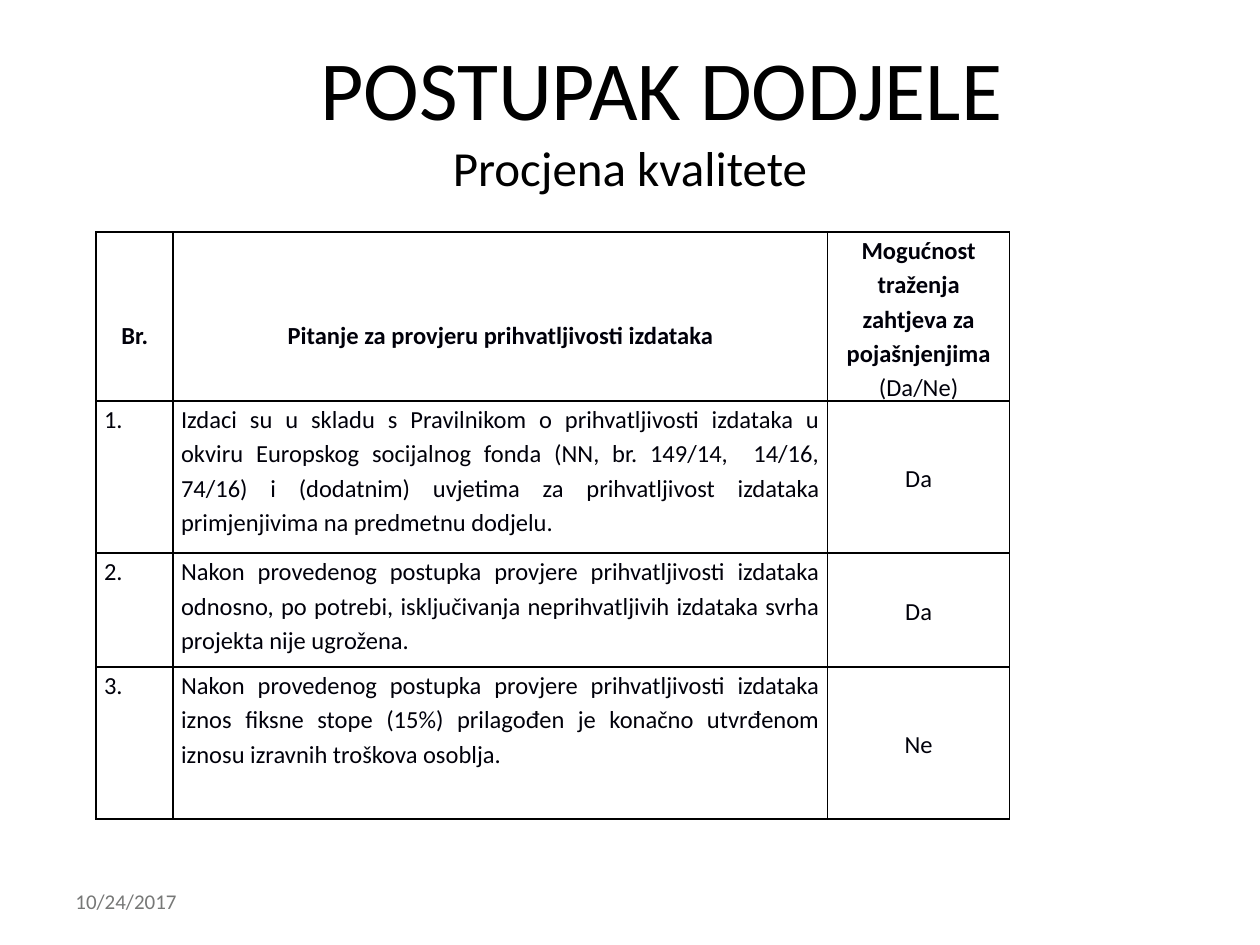
from lxml import etree
from pptx import Presentation
from pptx import util as u
from pptx.dml.color import RGBColor
from pptx.enum import text
from pptx.oxml.ns import qn

COLORS = {"title": "000000", "table": "00000A", "border": "000000", "date": "777877"}
CENTER, JUSTIFY = text.PP_ALIGN.CENTER, text.PP_ALIGN.JUSTIFY
MIDDLE, TOP = text.MSO_ANCHOR.MIDDLE, text.MSO_ANCHOR.TOP


class Sheet:
    """Holds the style and the current slide."""
    font_name = "Calibri"
    table_size = 14
    line_spacing = 1.15
    side_margin = 4.5
    border_width = 1

    def __init__(self, page):
        self.page = page

    def style(self, font, color, size, bold=False):
        font.name, font.size, font.bold = self.font_name, u.Pt(size), bold
        font.color.rgb = RGBColor.from_string(COLORS[color])

    def text_box(self, left, top, width, height, lines, color, align=None):
        """Lines are (wording, size) pairs, parted by line breaks."""
        box = self.page.shapes.add_textbox(*map(u.Pt, (left, top, width, height)))
        frame = box.text_frame
        frame.word_wrap = True
        frame.vertical_anchor = MIDDLE
        para = frame.paragraphs[0]
        para.alignment = align
        for index, (wording, size) in enumerate(lines):
            if index:
                para.add_line_break()
            span = para.add_run()
            span.text = wording
            self.style(span.font, color, size)

    def border(self, cell):
        properties = cell._tc.get_or_add_tcPr()
        for index, side in enumerate(("lnL", "lnR", "lnT", "lnB")):
            line = etree.Element(qn(f"a:{side}"), w=str(u.Pt(self.border_width)))
            fill = etree.SubElement(line, qn("a:solidFill"))
            etree.SubElement(fill, qn("a:srgbClr"), val=COLORS["border"])
            properties.insert(index, line)

    def cell(self, cell, spans, align, anchor, top_margin=0):
        """Spans are (wording, bold) pairs."""
        cell.margin_left = cell.margin_right = u.Pt(self.side_margin)
        cell.margin_top, cell.margin_bottom = u.Pt(top_margin), 0
        cell.vertical_anchor = anchor
        cell.fill.background()
        self.border(cell)
        para = cell.text_frame.paragraphs[0]
        para.alignment, para.line_spacing = align, self.line_spacing
        for wording, bold in spans:
            span = para.add_run()
            span.text = wording
            self.style(span.font, "table", self.table_size, bold)

    def table(self, left, top, widths, heights, header, rows):
        size = (left, top, sum(widths), sum(heights))
        table = self.page.shapes.add_table(
            len(heights), len(widths), *map(u.Pt, size)).table
        table.first_row = table.horz_banding = False
        for column, width in zip(table.columns, widths):
            column.width = u.Pt(width)
        for row, height in zip(table.rows, heights):
            row.height = u.Pt(height)
        for index, (spans, top_margin) in enumerate(header):
            self.cell(table.cell(0, index), spans, CENTER, MIDDLE, top_margin)
        for number, (question, answer) in enumerate(rows, 1):
            self.cell(table.cell(number, 0), [(f"{number}.", False)], JUSTIFY, TOP)
            self.cell(table.cell(number, 1), [(question, False)], JUSTIFY, TOP)
            self.cell(table.cell(number, 2), [(answer, False)], CENTER, MIDDLE)


HEADER_DROP = 19.5  # lowers the short headings by one line
HEADER = [
    ([("Br.", True)], HEADER_DROP),
    ([("Pitanje za provjeru prihvatljivosti izdataka", True)], HEADER_DROP),
    ([("Mogućnost traženja zahtjeva za pojašnjenjima ", True), ("(Da/Ne)", False)], 0),
]
QUESTIONS = [
    ("Izdaci su u skladu s Pravilnikom o prihvatljivosti izdataka u okviru "
     "Europskog socijalnog fonda (NN, br. 149/14,  14/16, 74/16) i (dodatnim) "
     "uvjetima za prihvatljivost izdataka primjenjivima na predmetnu dodjelu.", "Da"),
    ("Nakon provedenog postupka provjere prihvatljivosti izdataka odnosno, po "
     "potrebi, isključivanja neprihvatljivih izdataka svrha projekta nije "
     "ugrožena.", "Da"),
    ("Nakon provedenog postupka provjere prihvatljivosti izdataka iznos fiksne "
     "stope (15%) prilagođen je konačno utvrđenom iznosu izravnih troškova "
     "osoblja.", "Ne"),
]


def main():
    deck = Presentation()
    deck.slide_width, deck.slide_height = u.Pt(720), u.Pt(540)
    sheet = Sheet(deck.slides.add_slide(deck.slide_layouts[6]))

    # Date
    sheet.text_box(36, 500.5, 168, 28.75, [("10/24/2017", 12)], "date")

    # Title and subtitle
    sheet.text_box(36, 21.6, 648, 90,
                   [("\tPOSTUPAK DODJELE", 48), ("Procjena kvalitete", 28)],
                   "title", CENTER)

    # Assessment table
    sheet.table(55, 132.5, (44, 374, 104), (87, 87, 65, 87), HEADER, QUESTIONS)

    deck.save("out.pptx")


if __name__ == "__main__":
    main()
